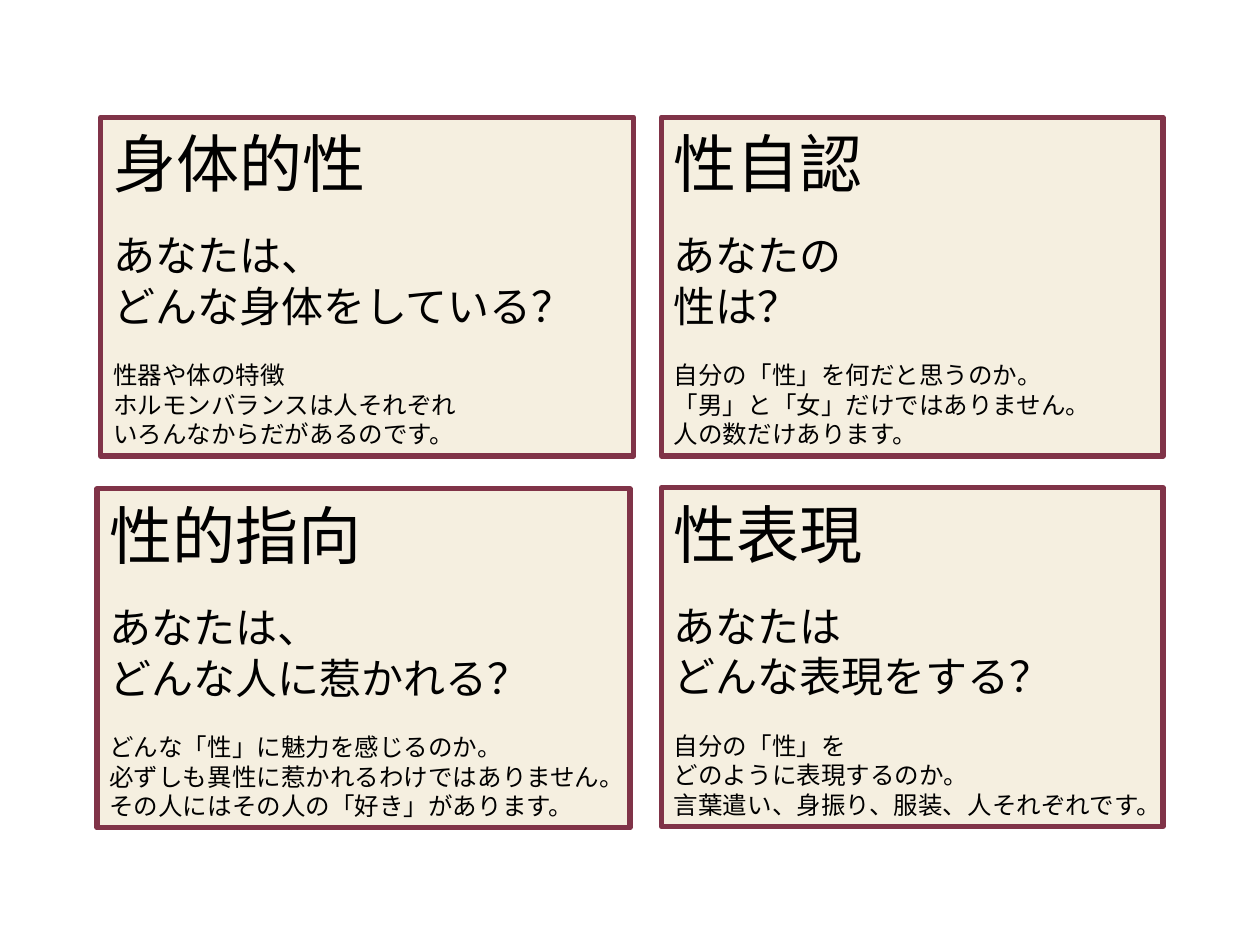
from lxml import etree
from pptx import Presentation
from pptx import util as u
from pptx.dml.color import RGBColor
from pptx.enum import shapes, text
from pptx.oxml.ns import qn


def color(value):
    return RGBColor.from_string(value)


class CardSlide:
    FONT = "Noto Sans CJK JP"
    FILL, BORDER, INK = "F5EFE0", "803348", "000000"
    HEADING, QUESTION, DETAIL = 36, 24, 14
    GROUP_GAP = 17

    def __init__(self, presentation):
        self.slide = presentation.slides.add_slide(presentation.slide_layouts[6])

    def add_card(self, left, top, width, height, heading, questions, details):
        card = self.slide.shapes.add_shape(
            shapes.MSO_SHAPE.RECTANGLE, *map(u.Inches, (left, top, width, height)))
        card.shadow.inherit = False
        card.fill.solid()
        card.fill.fore_color.rgb = color(self.FILL)
        card.line.color.rgb = color(self.BORDER)
        card.line.width = u.Pt(3)
        frame = card.text_frame
        frame.word_wrap = True
        frame.auto_size = text.MSO_AUTO_SIZE.SHAPE_TO_FIT_TEXT
        frame.vertical_anchor = text.MSO_ANCHOR.MIDDLE
        self.set_line(frame.paragraphs[0], heading, self.HEADING)
        for lines, size in ((questions, self.QUESTION), (details, self.DETAIL)):
            for index, line in enumerate(lines):
                paragraph = frame.add_paragraph()
                if index == 0:
                    paragraph.space_before = u.Pt(self.GROUP_GAP)
                self.set_line(paragraph, line, size)

    def set_line(self, paragraph, line, size):
        paragraph.text = line
        paragraph.alignment = text.PP_ALIGN.LEFT
        font = paragraph.font
        font.size = u.Pt(size)
        font.name = self.FONT
        font.color.rgb = color(self.INK)
        # East Asian glyphs take their typeface from a:ea
        properties = paragraph._p.pPr.find(qn("a:defRPr"))
        etree.SubElement(properties, qn("a:ea"), typeface=self.FONT)


LEFT_WIDTH, RIGHT_WIDTH, CARD_HEIGHT = 4.23, 3.98, 2.69
CARDS = [
    (0.8, 0.93, LEFT_WIDTH, "身体的性",
     ["あなたは、", "どんな身体をしている？"],
     ["性器や体の特徴", "ホルモンバランスは人それぞれ", "いろんなからだがあるのです。"]),
    (5.25, 0.93, RIGHT_WIDTH, "性自認",
     ["あなたの", "性は？"],
     ["自分の「性」を何だと思うのか。", "「男」と「女」だけではありません。", "人の数だけあります。"]),
    (0.77, 3.88, LEFT_WIDTH, "性的指向",
     ["あなたは、", "どんな人に惹かれる？"],
     ["どんな「性」に魅力を感じるのか。",
      "必ずしも異性に惹かれるわけではありません。その人にはその人の「好き」があります。"]),
    (5.25, 3.87, RIGHT_WIDTH, "性表現",
     ["あなたは", "どんな表現をする？"],
     ["自分の「性」を", "どのように表現するのか。", "言葉遣い、身振り、服装、人それぞれです。"]),
]


def main():
    presentation = Presentation()
    presentation.slide_width = u.Inches(10)
    presentation.slide_height = u.Inches(7.5)
    card_slide = CardSlide(presentation)
    for left, top, width, heading, questions, details in CARDS:
        card_slide.add_card(left, top, width, CARD_HEIGHT, heading, questions, details)
    presentation.save("out.pptx")


if __name__ == "__main__":
    main()
